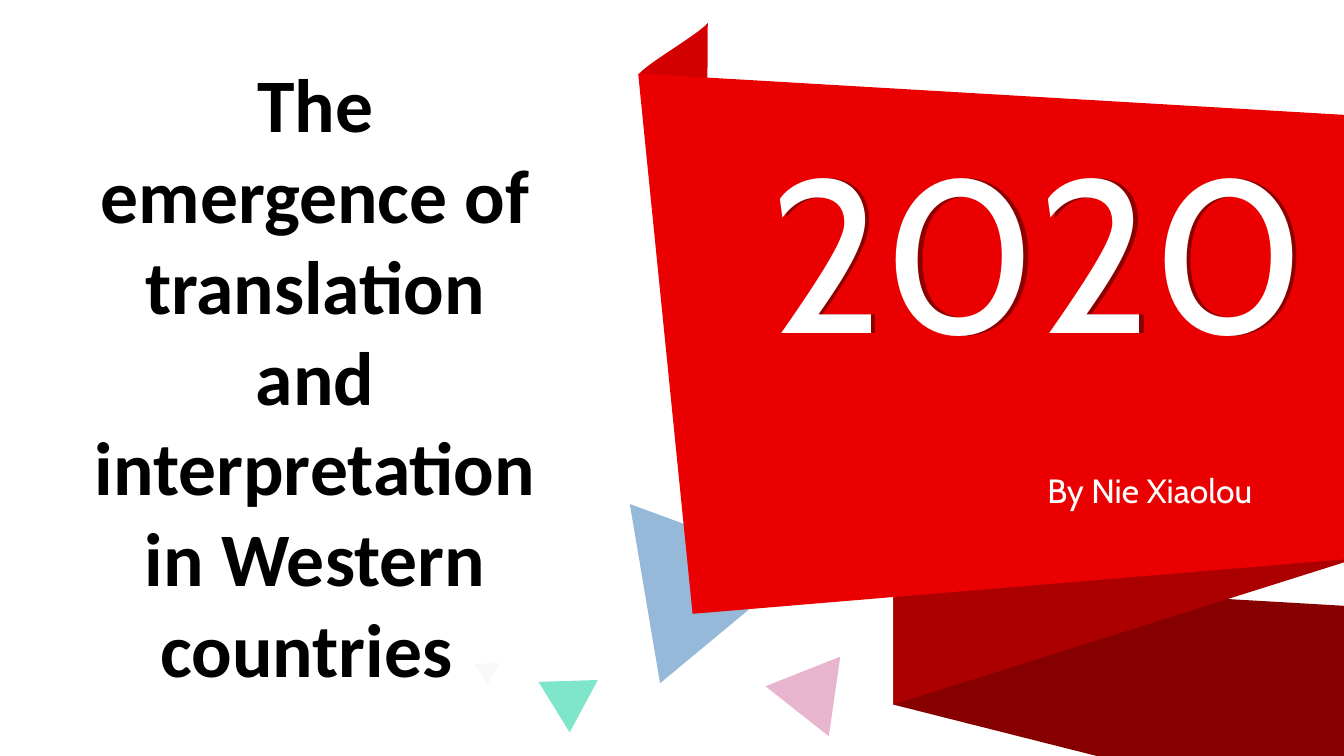
"""Build a title slide with a folded red ribbon and scattered triangles."""
from lxml import etree
from pptx import Presentation
from pptx.dml.color import RGBColor
from pptx.enum.shapes import MSO_SHAPE
from pptx.enum.text import MSO_AUTO_SIZE, PP_ALIGN
from pptx.oxml import parse_xml
from pptx.oxml.ns import qn
from pptx.util import Inches, Pt

TRIANGLE = MSO_SHAPE.ISOSCELES_TRIANGLE
LEFT, CENTER = PP_ALIGN.LEFT, PP_ALIGN.CENTER
FIT_SHAPE = MSO_AUTO_SIZE.SHAPE_TO_FIT_TEXT
DRAWING = 'xmlns:a="http://schemas.openxmlformats.org/drawingml/2006/main"'


def paint(shape, color, alpha=100):
    """Give a shape a flat fill with no line and no shadow."""
    shape.shadow.inherit = False
    shape.line.fill.background()
    shape.fill.solid()
    shape.fill.fore_color.rgb = RGBColor.from_string(color)
    if alpha < 100:
        color_element = shape.fill._xPr.find(".//" + qn("a:srgbClr"))
        etree.SubElement(color_element, qn("a:alpha")).set("val", str(alpha * 1000))


def bezier(start, first, second, end, steps=12):
    """Return the points of a cubic curve after its start."""
    points = []
    for step in range(1, steps + 1):
        t = step / steps
        weights = ((1 - t) ** 3, 3 * t * (1 - t) ** 2, 3 * t * t * (1 - t), t ** 3)
        points.append(tuple(
            sum(weight * value for weight, value in zip(weights, values))
            for values in zip(start, first, second, end)))
    return points


presentation = Presentation()
presentation.slide_width = Inches(13.33)
presentation.slide_height = Inches(7.5)
slide = presentation.slides.add_slide(presentation.slide_layouts[6])
slide.background.fill.solid()
slide.background.fill.fore_color.rgb = RGBColor.from_string("FFFFFF")

back_triangle = (5.84, 4.82, 1.81, 1.56, 320.3, "2E75B6")
front_triangles = [
    (7.72, 6.44, 0.8, 0.69, 38.3, "D06E9F"),
    (5.27, 6.63, 0.59, 0.51, 298.3, "00CC99"),
    (4.68, 6.53, 0.24, 0.21, 298.3, "F2F2F2"),
]
fold_top, fold_tip, fold_bottom = (6.34, 0.73), (7.02, 0.23), (6.93, 5.92)
ribbon_parts = [
    ("D20000", [fold_top,
                *bezier(fold_top, (6.45, 0.61), (6.91, 0.35), fold_tip),
                *bezier(fold_tip, (7.02, 1.41), (6.94, 4.74), fold_bottom)]),
    ("860000", [(8.86, 5.75), (13.33, 6.01), (13.33, 7.5), (10.88, 7.5), (8.86, 6.99)]),
    ("AC0000", [(8.86, 4.44), (13.3, 3.03), (13.33, 5.58), (8.86, 6.99)]),
    ("EA0000", [(6.33, 0.73), (13.33, 1.14), (13.33, 5.55), (6.87, 6.09)]),
]

for left, top, width, height, rotation, color in [back_triangle, *front_triangles]:
    triangle = slide.shapes.add_shape(
        TRIANGLE, Inches(left), Inches(top), Inches(width), Inches(height))
    triangle.rotation = rotation
    paint(triangle, color, 50)

for color, points in ribbon_parts:
    corners = [(Inches(x), Inches(y)) for x, y in points]
    builder = slide.shapes.build_freeform(*corners[0])
    builder.add_line_segments(corners[1:], close=True)
    paint(builder.convert_to_shape(), color)

texts = [
    ("2020", (7.53, 1.11, 5.8, 2.71), 155, "Cabin", "FFFFFF", False, LEFT),
    ("By Nie Xiaolou", (10.29, 4.61, 2.46, 0.5), 24, "Cabin", "FFFFFF", False, LEFT),
    ("The emergence of translation and interpretation in Western countries ",
     (0.7, 0.52, 4.85, 6.46), 54, "Calibri", "000000", True, CENTER),
]
boxes = []
for text, place, size, font, color, bold, alignment in texts:
    box = slide.shapes.add_textbox(*(Inches(value) for value in place))
    box.text_frame.word_wrap = True
    box.text_frame.auto_size = FIT_SHAPE
    paragraph = box.text_frame.paragraphs[0]
    paragraph.alignment = alignment
    run = paragraph.add_run()
    run.text = text
    run.font.size = Pt(size)
    run.font.name = font
    run.font.bold = bold
    run.font.color.rgb = RGBColor.from_string(color)
    boxes.append(box)

year_box, author_box, title_box = boxes
year_box._element.spPr.append(parse_xml(
    f'<a:effectLst {DRAWING}><a:outerShdw dist="38100" dir="0" algn="l" rotWithShape="0">'
    '<a:srgbClr val="000000"><a:alpha val="40000"/></a:srgbClr>'
    '</a:outerShdw></a:effectLst>'))
title_run = title_box.text_frame.paragraphs[0].runs[0]
title_run.font._element.insert(0, parse_xml(
    f'<a:ln {DRAWING} w="9525"><a:solidFill><a:srgbClr val="FFFFFF"/></a:solidFill></a:ln>'))

presentation.save("out.pptx")
